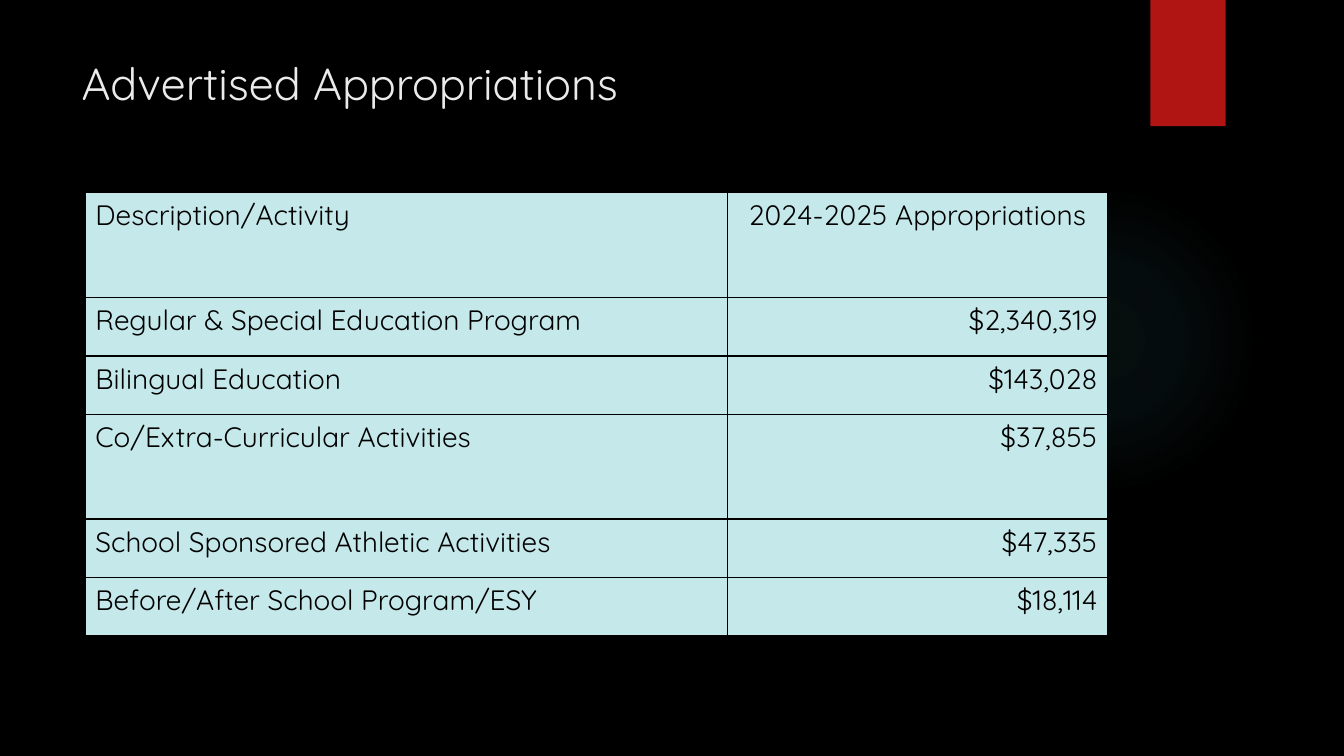
"""Build the advertised appropriations slide."""
from lxml import etree
from pptx import Presentation
from pptx import util as u
from pptx.dml.color import RGBColor
from pptx.enum import shapes, text
from pptx.oxml import parse_xml
from pptx.oxml.ns import nsdecls, qn

BLACK = RGBColor(0x00, 0x00, 0x00)
WHITE = RGBColor(0xEB, 0xEB, 0xEB)
RED = RGBColor(0xB0, 0x15, 0x13)
TEAL = RGBColor(0x50, 0xB9, 0xC1)
PALE = RGBColor(0xC5, 0xE8, 0xEA)

ROWS = [
    ("Description/Activity", "2024-2025 Appropriations"),
    ("Regular & Special Education Program", "$2,340,319"),
    ("Bilingual Education", "$143,028"),
    ("Co/Extra-Curricular Activities", "$37,855"),
    ("School Sponsored Athletic Activities", "$47,335"),
    ("Before/After School Program/ESY", "$18,114"),
]
COLUMN_WIDTHS = (16.18, 9.58)
TALL_ROWS = (0, 3)
TALL, SHORT = 2.64, 1.47


class SlideBuilder:
    """Hold the style and the current slide."""

    font = "Quicksand"

    def __init__(self, deck):
        self.slide = deck.slides.add_slide(deck.slide_layouts[5])
        fill = self.slide.background.fill
        fill.solid()
        fill.fore_color.rgb = BLACK

    def add_span(self, para, words, size, color, align=text.PP_ALIGN.LEFT):
        """Add one styled run to a paragraph."""
        para.alignment = align
        span = para.add_run()
        span.text = words
        span.font.name = self.font
        span.font.size = u.Pt(size)
        span.font.color.rgb = color

    def shape(self, kind, left, top, width, height, color):
        """Add a filled preset shape without outline."""
        box = self.slide.shapes.add_shape(
            kind, u.Cm(left), u.Cm(top), u.Cm(width), u.Cm(height))
        box.shadow.inherit = False
        box.fill.solid()
        box.fill.fore_color.rgb = color
        box.line.fill.background()
        return box

    def glow(self, left, top, size, color, stops):
        """Add a circle that fades from its centre."""
        circle = self.shape(shapes.MSO_SHAPE.OVAL, left, top, size, size, color)
        marks = "".join(
            f'<a:gs pos="{place * 1000}"><a:srgbClr val="{color}">'
            f'<a:alpha val="{alpha * 1000}"/></a:srgbClr></a:gs>'
            for place, alpha in stops)
        gradient = parse_xml(
            f'<a:gradFill {nsdecls("a")}><a:gsLst>{marks}</a:gsLst><a:path path="circle">'
            '<a:fillToRect l="50000" t="50000" r="50000" b="50000"/></a:path></a:gradFill>')
        properties = circle.element.spPr
        properties.replace(properties.find(qn("a:solidFill")), gradient)

    def title(self, words, left, top, width, height):
        """Place and fill the title placeholder."""
        box = self.slide.shapes.title
        box.left, box.top = u.Cm(left), u.Cm(top)
        box.width, box.height = u.Cm(width), u.Cm(height)
        frame = box.text_frame
        frame.word_wrap = True
        frame.auto_size = text.MSO_AUTO_SIZE.NONE
        frame.vertical_anchor = text.MSO_ANCHOR.TOP
        self.add_span(frame.paragraphs[0], words, 32, WHITE)

    def border(self, cell):
        """Draw a thin line on each side of a cell."""
        properties = cell._tc.get_or_add_tcPr()
        for position, side in enumerate(("lnL", "lnR", "lnT", "lnB")):
            line = etree.Element(qn(f"a:{side}"), w=str(u.Pt(1)))
            fill = etree.SubElement(line, qn("a:solidFill"))
            etree.SubElement(fill, qn("a:srgbClr"), val=str(BLACK))
            properties.insert(position, line)

    def table(self, rows, left, top, widths, heights):
        """Add a bordered table with amounts on the right."""
        grid = self.slide.shapes.add_table(
            len(rows), len(widths), u.Cm(left), u.Cm(top),
            u.Cm(sum(widths)), u.Cm(sum(heights))).table
        for column, width in zip(grid.columns, widths):
            column.width = u.Cm(width)
        for row, height in zip(grid.rows, heights):
            row.height = u.Cm(height)
        for r, values in enumerate(rows):
            amount = text.PP_ALIGN.RIGHT if r else text.PP_ALIGN.CENTER
            for c, (words, align) in enumerate(zip(values, (text.PP_ALIGN.LEFT, amount))):
                cell = grid.cell(r, c)
                cell.fill.solid()
                cell.fill.fore_color.rgb = PALE
                self.border(cell)
                self.add_span(cell.text_frame.paragraphs[0], words, 20, BLACK, align)


def main():
    deck = Presentation()
    deck.slide_width, deck.slide_height = u.Cm(33.87), u.Cm(19.05)
    page = SlideBuilder(deck)
    page.glow(23.9, 4.65, 7.82, TEAL, [(0, 7), (36, 6), (69, 0), (100, 0)])
    page.shape(shapes.MSO_SHAPE.RECTANGLE, 28.99, 0, 1.9, 3.18, RED)
    page.title("Advertised Appropriations", 1.8, 1.27, 26.14, 3.89)
    heights = [TALL if r in TALL_ROWS else SHORT for r in range(len(ROWS))]
    page.table(ROWS, 2.15, 4.86, COLUMN_WIDTHS, heights)
    deck.save("out.pptx")


if __name__ == "__main__":
    main()
